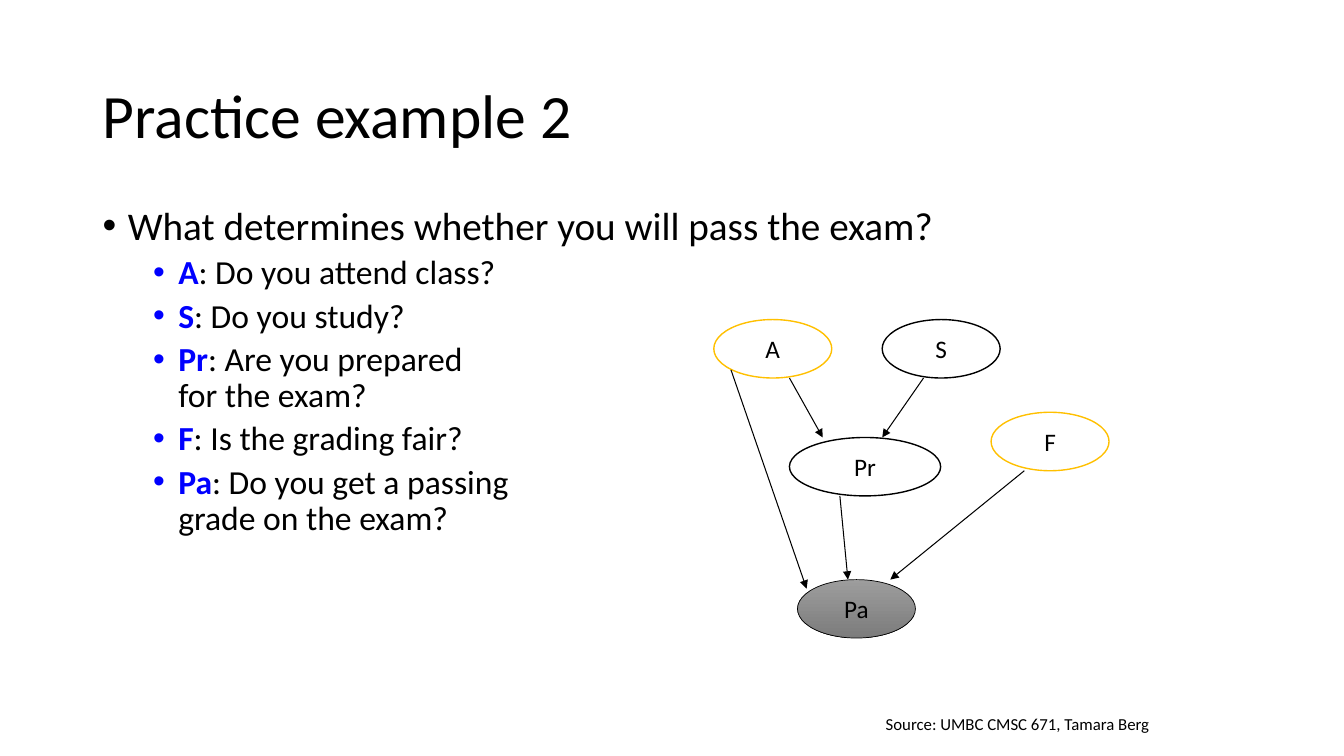
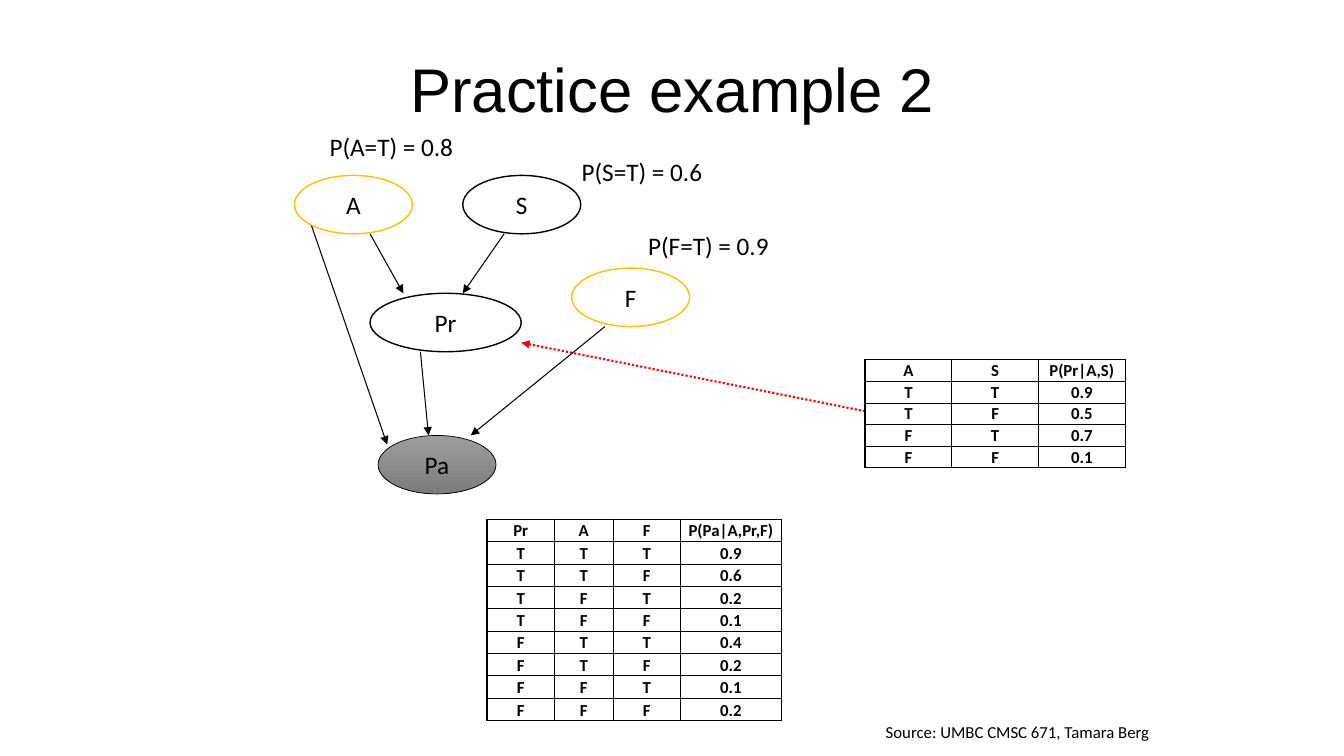
from lxml.etree import SubElement
from pptx import Presentation
from pptx.dml.color import RGBColor
from pptx.enum.dml import MSO_LINE
from pptx.enum.shapes import MSO_CONNECTOR, MSO_SHAPE
from pptx.enum.text import MSO_ANCHOR, PP_ALIGN
from pptx.oxml.ns import qn
from pptx.util import Inches, Pt

BLACK, WHITE, BLUE, AMBER, RED = "000000", "FFFFFF", "0000FF", "FFC000", "FF0000"
EVIDENCE_TOP, EVIDENCE_BOTTOM = "9D9D9D", "7C7C7C"

NODES = [
    ("A", 0, 0, 1.17, AMBER),
    ("S", 1.67, 0, 1.17, BLACK),
    ("Pr", 0.75, 1.17, 1.5, BLACK),
    ("F", 2.75, 0.92, 1.17, AMBER),
]
EDGES = [
    ((0.75, 0.58), (1.08, 1.17)),
    ((2.08, 0.58), (1.67, 1.17)),
    ((3.08, 1.5), (1.75, 2.58)),
    ((1.25, 1.75), (1.33, 2.58)),
    ((0.17, 0.5), (0.92, 2.67)),
]
VARIABLES = [
    ("A", "Do you attend class?"),
    ("S", "Do you study?"),
    ("Pr", "Are you prepared\nfor the exam?"),
    ("F", "Is the grading fair?"),
    ("Pa", "Do you get a passing\ngrade on the exam?"),
]
PRIORS = [("P(A=T) = 0.8", 3.17, 1.25), ("P(S=T) = 0.6", 5.67, 1.5), ("P(F=T) = 0.9", 6.33, 2.24)]
PREPARED_TABLE = ["A S P(Pr|A,S)", "T T 0.9", "T F 0.5", "F T 0.7", "F F 0.1"]
PASSING_TABLE = [
    "Pr A F P(Pa|A,Pr,F)",
    "T T T 0.9", "T T F 0.6", "T F T 0.2", "T F F 0.1",
    "F T T 0.4", "F T F 0.2", "F F T 0.1", "F F F 0.2",
]


def rgb(value):
    """Turn a hex string into a colour."""
    return RGBColor.from_string(value)


class Deck:
    """Holds the shared style and the current slide."""

    body_font = "Calibri"

    def __init__(self):
        """Open an empty widescreen presentation."""
        self.presentation = Presentation()
        self.presentation.slide_width = Inches(13.33)
        self.presentation.slide_height = Inches(7.5)
        self.shapes = None

    def new_slide(self):
        """Start a blank slide."""
        self.shapes = self.presentation.slides.add_slide(self.presentation.slide_layouts[6]).shapes

    def style(self, font, size, color=BLACK, bold=False, name=body_font):
        """Set the face, size, weight and colour of a font."""
        font.name, font.size, font.bold = name, Pt(size), bold
        font.color.rgb = rgb(color)

    def frame(self, left, top, width, height, anchor=MSO_ANCHOR.TOP):
        """Add a wrapping text box and return its text frame."""
        frame = self.shapes.add_textbox(Inches(left), Inches(top), Inches(width), Inches(height)).text_frame
        frame.word_wrap = True
        frame.vertical_anchor = anchor
        return frame

    def text(self, words, box, size, align=PP_ALIGN.LEFT, anchor=MSO_ANCHOR.TOP, name=body_font):
        """Add a single paragraph of text."""
        paragraph = self.frame(*box, anchor).paragraphs[0]
        paragraph.text = words
        paragraph.alignment = align
        self.style(paragraph.font, size, name=name)

    def title(self, words, box, **look):
        """Add the slide title."""
        self.text(words, box, 44, anchor=MSO_ANCHOR.MIDDLE, **look)

    def credit(self, top):
        """Add the source line at the foot of the slide."""
        self.text("Source: UMBC CMSC 671, Tamara Berg", (7.75, top, 3.75, 0.3), 12, PP_ALIGN.RIGHT)

    def bullet(self, paragraph, level, size, space):
        """Turn a paragraph into a bulleted one."""
        paragraph.level = level
        paragraph.line_spacing = 0.9
        paragraph.space_before = Pt(space)
        self.style(paragraph.font, size)
        properties = paragraph._p.get_or_add_pPr()
        properties.set("marL", str(Inches(0.25 + 0.5 * level)))
        properties.set("indent", str(Inches(-0.25)))
        marks = [("a:buFont", "typeface", "Arial"), ("a:buChar", "char", "•")]
        defaults = properties.find(qn("a:defRPr"))
        for tag, key, value in marks:
            mark = SubElement(properties, qn(tag))
            mark.set(key, value)
            defaults.addprevious(mark)

    def question(self, words, variables):
        """Add the main question and the variables below it."""
        frame = self.frame(0.92, 2, 11.5, 4.76)
        frame.paragraphs[0].text = words
        self.bullet(frame.paragraphs[0], 0, 28, 10)
        for symbol, meaning in variables:
            paragraph = frame.add_paragraph()
            self.bullet(paragraph, 1, 24, 5)
            key = paragraph.add_run()
            key.text = symbol
            self.style(key.font, 24, BLUE, True)
            for number, line in enumerate(f": {meaning}".split("\n")):
                if number:
                    paragraph.add_line_break()
                run = paragraph.add_run()
                run.text = line
                self.style(run.font, 24)

    def node(self, label, left, top, width, outline, line_width=1):
        """Add a labelled white ellipse and return it."""
        ellipse = self.shapes.add_shape(
            MSO_SHAPE.OVAL, Inches(left), Inches(top), Inches(width), Inches(0.58))
        ellipse.shadow.inherit = False
        ellipse.fill.solid()
        ellipse.fill.fore_color.rgb = rgb(WHITE)
        ellipse.line.color.rgb = rgb(outline)
        ellipse.line.width = Pt(line_width)
        frame = ellipse.text_frame
        frame.word_wrap = False
        frame.vertical_anchor = MSO_ANCHOR.MIDDLE
        paragraph = frame.paragraphs[0]
        paragraph.text = label
        paragraph.alignment = PP_ALIGN.CENTER
        self.style(paragraph.font, 18)
        return ellipse

    def evidence(self, label, left, top):
        """Add the shaded node of the observed variable."""
        fill = self.node(label, left, top, 1.17, BLACK, 0.5).fill
        fill.gradient()
        fill.gradient_angle = 270
        for stop, shade in zip(fill.gradient_stops, (EVIDENCE_TOP, EVIDENCE_BOTTOM)):
            stop.color.rgb = rgb(shade)

    def arrow(self, start, end, color=BLACK, width=0.75, dash=None):
        """Add a straight arrow between two points."""
        points = [Inches(value) for value in (*start, *end)]
        connector = self.shapes.add_connector(MSO_CONNECTOR.STRAIGHT, *points)
        connector.line.color.rgb = rgb(color)
        connector.line.width = Pt(width)
        if dash:
            connector.line.dash_style = dash
        properties = connector._element.spPr
        SubElement(properties.find(qn("a:ln")), qn("a:tailEnd")).set("type", "triangle")
        SubElement(properties, qn("a:effectLst"))

    def network(self, left, top):
        """Add the whole Bayesian network at a given corner."""
        for label, across, down, width, outline in NODES:
            self.node(label, left + across, top + down, width, outline)
        self.evidence("Pa", left + 0.83, top + 2.58)
        for start, end in EDGES:
            self.arrow(*((left + across, top + down) for across, down in (start, end)))

    def borders(self, cell, widths):
        """Draw the left, right, top and bottom borders of a cell."""
        properties = cell._tc.get_or_add_tcPr()
        for side, width in zip("LRTB", widths):
            border = SubElement(properties, qn(f"a:ln{side}"), w=str(Pt(width)))
            SubElement(SubElement(border, qn("a:solidFill")), qn("a:srgbClr"), val=BLACK)

    def probabilities(self, lines, left, top, columns, height):
        """Add a conditional probability table with a heavier frame."""
        rows = [line.split() for line in lines]
        table = self.shapes.add_table(
            len(rows), len(columns), Inches(left), Inches(top),
            Inches(sum(columns)), Inches(height)).table
        table.first_row = table.horz_banding = False
        for column, width in zip(table.columns, columns):
            column.width = Inches(width)
        last_row, last_column = len(rows) - 1, len(columns) - 1
        for r, values in enumerate(rows):
            table.rows[r].height = Inches(height / len(rows))
            for c, value in enumerate(values):
                cell = table.cell(r, c)
                outer = (c == 0, c == last_column, r == 0, r == last_row)
                self.borders(cell, [1 if edge else 0.5 for edge in outer])
                cell.fill.background()
                cell.margin_left = cell.margin_right = cell.margin_top = Inches(0.01)
                cell.margin_bottom = 0
                cell.vertical_anchor = MSO_ANCHOR.BOTTOM
                paragraph = cell.text_frame.paragraphs[0]
                paragraph.text = value
                paragraph.alignment = PP_ALIGN.CENTER
                self.style(paragraph.font, 12, bold=True)


def main():
    """Build both slides and save them."""
    deck = Deck()
    heading = "Practice example 2"

    deck.new_slide()
    deck.question("What determines whether you will pass the exam?", VARIABLES)
    deck.network(7.08, 3.17)
    deck.title(heading, (0.92, 0.4, 11.5, 1.45))
    deck.credit(7.03)

    deck.new_slide()
    deck.title(heading, (2.42, 0.25, 8.5, 1.25), align=PP_ALIGN.CENTER, name="Arial")
    deck.arrow((8.58, 4.08), (5.17, 3.4), RED, 1.5, MSO_LINE.ROUND_DOT)
    deck.credit(7.11)
    deck.probabilities(PREPARED_TABLE, 8.58, 3.57, [0.86] * 3, 1.07)
    deck.network(2.92, 1.74)
    for prior, left, top in PRIORS:
        deck.text(prior, (left, top, 1.6, 0.4), 18)
    deck.probabilities(PASSING_TABLE, 4.83, 5.15, [0.67, 0.58, 0.67, 1], 2)

    deck.presentation.save("out.pptx")


if __name__ == "__main__":
    main()
